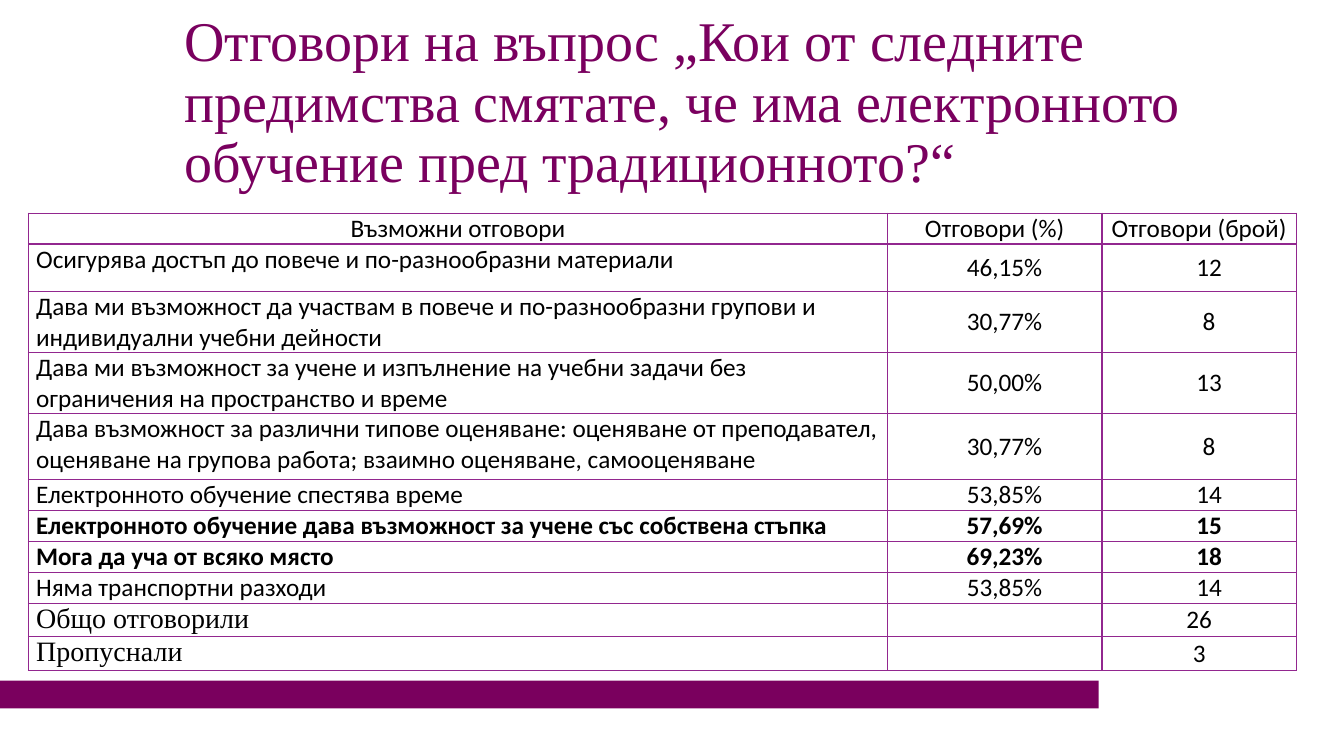
"""Build the slide on the advantages of e-learning as a survey results table."""
from lxml.etree import SubElement
from pptx import Presentation
from pptx.dml.color import RGBColor
from pptx.enum.shapes import MSO_SHAPE as Shape
from pptx.enum.text import MSO_ANCHOR as Anchor, PP_ALIGN as Align
from pptx.oxml.ns import qn
from pptx.util import Cm, Pt

TITLE = "Отговори на въпрос „Кои от следните предимства смятате, че има електронното обучение пред традиционното?“"
HEADINGS = ("Възможни отговори", "Отговори (%)", "Отговори (брой)")
ANSWERS = [
    ("Осигурява достъп до повече и по-разнообразни материали", "46,15%", "12"),
    ("Дава ми възможност да участвам в повече и по-разнообразни групови и индивидуални учебни дейности", "30,77%", "8"),
    ("Дава ми възможност за учене и изпълнение на учебни задачи без ограничения на пространство и време", "50,00%", "13"),
    ("Дава възможност за различни типове оценяване: оценяване от преподавател, оценяване на групова работа; взаимно оценяване, самооценяване", "30,77%", "8"),
    ("Електронното обучение спестява време", "53,85%", "14"),
    ("Електронното обучение дава възможност за учене със собствена стъпка", "57,69%", "15"),
    ("Мога да уча от всяко място", "69,23%", "18"),
    ("Няма транспортни разходи", "53,85%", "14"),
]
TOTALS = [("Общо отговорили", "", "26"), ("Пропуснали", "", "3")]
TOP_ANSWERS = {"Електронното обучение дава възможност за учене със собствена стъпка", "Мога да уча от всяко място"}
COLUMN_WIDTHS = (21.64, 5.41, 4.9)
LINE_HEIGHT = 0.78
ROW_HEIGHTS = [LINE_HEIGHT, 1.19, 1.54, 1.54, 1.66] + [LINE_HEIGHT] * 6

TITLE_FONT = {"name": "Times New Roman", "size": Pt(40)}
ANSWER_FONT = {"name": "Calibri", "size": Pt(18)}
TOTAL_FONT = {"name": "Times New Roman", "size": Pt(20)}
CELL_FORMAT = {"margin_left": Cm(0.19), "margin_right": Cm(0.19), "margin_top": 0, "margin_bottom": 0}


def color(value):
    return RGBColor.from_string(value)


def apply(target, values):
    for key, value in values.items():
        setattr(target, key, value)


def write(paragraph, text, font, font_color):
    run = paragraph.add_run()
    run.text = text
    apply(run.font, font)
    run.font.color.rgb = color(font_color)


def add_borders(cell, line_color):
    properties = cell._tc.get_or_add_tcPr()
    for position, side in enumerate(("lnL", "lnR", "lnT", "lnB")):
        line = properties.makeelement(qn(f"a:{side}"), {"w": str(Pt(1))})
        properties.insert(position, line)
        fill = SubElement(line, qn("a:solidFill"))
        SubElement(fill, qn("a:srgbClr"), val=line_color)


def add_band(slide):
    band = slide.shapes.add_shape(Shape.RECTANGLE, 0, Cm(17.15), Cm(27.69), Cm(0.7))
    band.shadow.inherit = False
    band.fill.solid()
    band.fill.fore_color.rgb = color("7A005E")
    band.line.fill.background()


def add_title(slide):
    frame = slide.shapes.add_textbox(Cm(4.4), Cm(0.79), Cm(27.13), Cm(3.68)).text_frame
    apply(frame, {"word_wrap": True, "vertical_anchor": Anchor.MIDDLE})
    frame.paragraphs[0].line_spacing = 0.9
    write(frame.paragraphs[0], TITLE, TITLE_FONT, "7A005F")


def fill_cell(cell, text, is_heading, is_answer_label, is_total, is_bold):
    apply(cell, CELL_FORMAT)
    cell.vertical_anchor = Anchor.TOP if is_answer_label else Anchor.MIDDLE
    cell.fill.background()
    add_borders(cell, "92278F")
    paragraph = cell.text_frame.paragraphs[0]
    paragraph.alignment = Align.LEFT if is_answer_label else Align.CENTER
    if not (is_heading or is_answer_label or is_total):
        apply_indent = {"marL": "0", "indent": str(Cm(0.5))}
        for key, value in apply_indent.items():
            paragraph._p.get_or_add_pPr().set(key, value)
    if text:
        font = TOTAL_FONT if is_total and is_answer_label else ANSWER_FONT
        write(paragraph, text, {**font, "bold": is_bold}, "000000")


def add_results(slide):
    rows = [HEADINGS, *ANSWERS, *TOTALS]
    results = slide.shapes.add_table(
        len(rows), len(HEADINGS), Cm(0.72), Cm(5.37), Cm(sum(COLUMN_WIDTHS)), Cm(sum(ROW_HEIGHTS))
    ).table
    apply(results, {"first_row": False, "horz_banding": False})
    for column, width in zip(results.columns, COLUMN_WIDTHS):
        column.width = Cm(width)
    for row_index, (values, height) in enumerate(zip(rows, ROW_HEIGHTS)):
        results.rows[row_index].height = Cm(height)
        is_heading = values is HEADINGS
        for column_index, text in enumerate(values):
            is_answer_label = column_index == 0 and not is_heading
            fill_cell(results.cell(row_index, column_index), text, is_heading,
                      is_answer_label, values in TOTALS, values[0] in TOP_ANSWERS)


def main():
    deck = Presentation()
    apply(deck, {"slide_width": Cm(33.87), "slide_height": Cm(19.05)})
    slide = deck.slides.add_slide(deck.slide_layouts[6])
    add_band(slide)
    add_title(slide)
    add_results(slide)
    deck.save("out.pptx")


if __name__ == "__main__":
    main()
